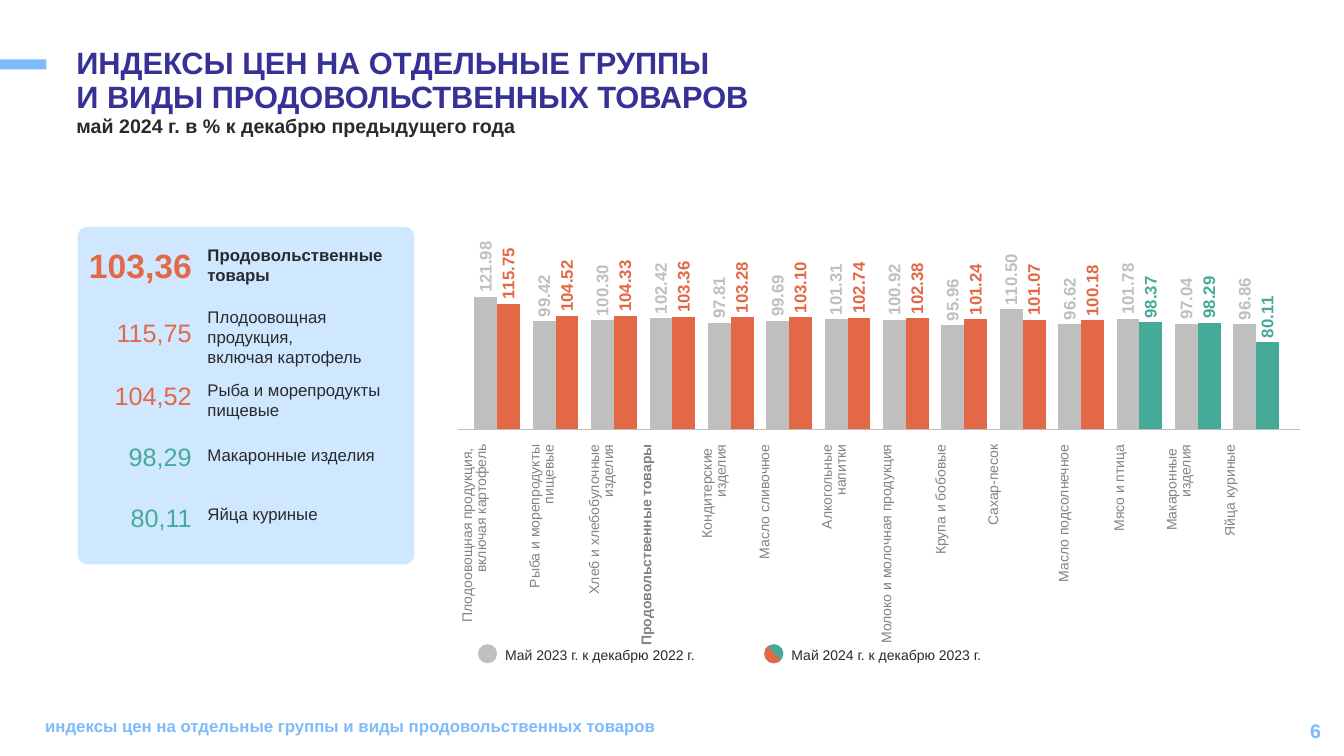
from lxml.etree import SubElement
from pptx import Presentation
from pptx.chart.data import CategoryChartData
from pptx.dml.color import RGBColor
from pptx.enum.chart import XL_CHART_TYPE, XL_LABEL_POSITION
from pptx.enum.shapes import MSO_CONNECTOR, MSO_SHAPE
from pptx.enum.text import MSO_ANCHOR, PP_ALIGN
from pptx.oxml.ns import qn
from pptx.util import Inches, Pt

FONT = "Arial"
NO_GRID_STYLE = "{2D5ABB26-0587-4C30-8999-92F81FD0307C}"
COLORS = {"title": "363194", "text": "282A2E", "sky": "7DBBFC", "panel": "CFE8FF",
          "up": "E36846", "down": "46AA98", "past": "BFBFBF", "axis": "838383"}

HIGHLIGHTS = [
    ("103,36", "Продовольственные товары", "up", 2.38, 2.38, 1),
    ("115,75", "Плодоовощная продукция, \nвключая картофель", "up", 3.1, 2.99, 1),
    ("104,52", "Рыба и морепродукты пищевые", "up", 3.72, 3.72, 1),
    ("98,29", "Макаронные изделия", "down", 4.33, 4.4, 0.8),
    ("80,11", "Яйца куриные", "down", 4.93, 4.99, 0.8),
]
GOODS = [
    ("Плодоовощная продукция, \nвключая картофель", 0.67, 121.98, 115.75),
    ("Рыба и морепродукты пищевые", 0.59, 99.42, 104.52),
    ("Хлеб и хлебобулочные изделия", 0.52, 100.30, 104.33),
    ("Продовольственные товары", 0.6, 102.42, 103.36),
    ("Кондитерские \nизделия", 0.57, 97.81, 103.28),
    ("Масло сливочное", 0.62, 99.69, 103.10),
    ("Алкогольные\nнапитки", 0.59, 101.31, 102.74),
    ("Молоко и молочная продукция", 0.54, 100.92, 102.38),
    ("Крупа и бобовые", 0.52, 95.96, 101.24),
    ("Сахар-песок", 0.7, 110.50, 101.07),
    ("Масло подсолнечное", 0.55, 96.62, 100.18),
    ("Мясо и птица", 0.52, 101.78, 98.37),
    ("Макаронные \nизделия", 0.58, 97.04, 98.29),
    ("Яйца куриные", 0.76, 96.86, 80.11),
]
TOTAL = "Продовольственные товары"


def rgb(name):
    """Return a palette colour."""
    return RGBColor.from_string(COLORS[name])


def style_font(font, size, color, bold=False):
    """Set family, size, colour and weight of a font."""
    font.name, font.size, font.bold = FONT, Pt(size), bold
    font.color.rgb = rgb(color)


def write(tf, text, size=12, color="text", bold=False, align=PP_ALIGN.LEFT, spacing=1):
    """Fill a text frame with one formatted paragraph."""
    tf.word_wrap = True
    p = tf.paragraphs[0]
    p.alignment, p.line_spacing = align, spacing
    for i, line in enumerate(text.split("\n")):
        if i:
            p.add_line_break()
        r = p.add_run()
        r.text = line
        style_font(r.font, size, color, bold)


def add_text(s, box, text, inset=None, anchor=MSO_ANCHOR.TOP, **fmt):
    """Add a text box at box (left, top, width, height)."""
    tf = s.shapes.add_textbox(*map(Inches, box)).text_frame
    tf.vertical_anchor = anchor
    if inset is not None:
        tf.margin_left = tf.margin_right = tf.margin_top = tf.margin_bottom = Inches(inset)
    write(tf, text, **fmt)


def add_block(s, kind, box, color):
    """Add a plain filled shape."""
    sp = s.shapes.add_shape(kind, *map(Inches, box))
    sp.shadow.inherit = False
    sp.fill.solid()
    sp.fill.fore_color.rgb = rgb(color)
    sp.line.fill.background()
    return sp


def add_header(s, x, y, w):
    """Draw the accent bar, title and subtitle."""
    add_block(s, MSO_SHAPE.RECTANGLE, (0, y + 0.16, 0.46, 0.1), "sky")
    add_text(s, (x, y, w, 0.68), "ИНДЕКСЫ ЦЕН НА ОТДЕЛЬНЫЕ ГРУППЫ\nИ ВИДЫ ПРОДОВОЛЬСТВЕННЫХ ТОВАРОВ",
             size=22, color="title", bold=True, spacing=0.9)
    add_text(s, (x, y + 0.68, w, 0.4), "май 2024 г. в % к декабрю предыдущего года",
             size=14, bold=True, spacing=0.9)


def add_panel(s, x, y, w, h):
    """Draw the panel of highlighted indices."""
    add_block(s, MSO_SHAPE.ROUNDED_RECTANGLE, (x, y, w, h), "panel").adjustments[0] = 0.03
    for i, (value, label, color, value_top, label_top, spacing) in enumerate(HIGHLIGHTS):
        main = i == 0
        add_text(s, (x - 0.05, value_top, 1.28, 0.5 if main else 0.4), value,
                 size=24 if main else 18, color=color, bold=main, align=PP_ALIGN.RIGHT)
        add_text(s, (x + 1.19, label_top, 2.13, 0.5), label, bold=main, spacing=spacing)


def set_plot_area(chart, **frame):
    """Fix the inner plot area as fractions of the chart."""
    area = chart._chartSpace.chart.plotArea
    for old in area.findall(qn("c:layout")):
        area.remove(old)
    layout = SubElement(area, qn("c:layout"))
    area.insert(0, layout)
    manual = SubElement(layout, qn("c:manualLayout"))
    items = {"layoutTarget": "inner", "xMode": "edge", "yMode": "edge", **frame}
    for tag, value in items.items():
        SubElement(manual, qn(f"c:{tag}")).set("val", str(value))


def add_index_chart(s, x, y, w, h):
    """Draw the column chart and its base line."""
    data = CategoryChartData(number_format="0.00")
    data.categories = [str(i + 1) for i in range(len(GOODS))]
    data.add_series("Май 2023 г. к декабрю 2022 г.", [g[2] for g in GOODS])
    data.add_series("Май 2024 г. к декабрю 2023 г.", [g[3] for g in GOODS])
    chart = s.shapes.add_chart(XL_CHART_TYPE.COLUMN_CLUSTERED,
                               *map(Inches, (x, y, w, h)), data).chart
    chart.has_legend = chart.has_title = False
    style_font(chart.font, 10, "text")
    chart.value_axis.minimum_scale, chart.value_axis.maximum_scale = 0, 190
    chart.value_axis.has_major_gridlines = False
    chart.value_axis.visible = chart.category_axis.visible = False
    set_plot_area(chart, x=0.01, y=0.05, w=0.984, h=0.875)
    plot = chart.plots[0]
    plot.gap_width, plot.overlap, plot.vary_by_categories = 56, 0, False
    for series, color in zip(plot.series, ("past", "up")):
        series.format.fill.solid()
        series.format.fill.fore_color.rgb = rgb(color)
        labels = series.data_labels
        labels.show_value = True
        labels.number_format, labels.number_format_is_linked = "#,##0.00", False
        labels.position = XL_LABEL_POSITION.OUTSIDE_END
        style_font(labels.font, 12, color, True)
    for i, good in enumerate(GOODS):
        if good[3] < 100:
            point = plot.series[1].points[i]
            point.format.fill.solid()
            point.format.fill.fore_color.rgb = rgb("down")
            style_font(point.data_label.font, 12, "down", True)
            point.data_label.position = XL_LABEL_POSITION.OUTSIDE_END
    for body in chart._chartSpace.xpath(".//c:dLbls//a:bodyPr"):
        body.set("rot", "-5400000")
        body.set("vert", "horz")
    base = s.shapes.add_connector(MSO_CONNECTOR.STRAIGHT, *map(
        Inches, (x - 0.02, y + 2.16, x + 8.33, y + 2.16)))
    base.line.color.rgb, base.line.width = rgb("past"), Pt(1)
    SubElement(base._element.spPr, qn("a:effectLst"))


def add_goods_names(s, x, y, w, h):
    """Draw the row of upright names under the columns."""
    table = s.shapes.add_table(1, len(GOODS), *map(Inches, (x, y, w, h))).table
    table.first_row = table.horz_banding = False
    table._tbl.tblPr.find(qn("a:tableStyleId")).text = NO_GRID_STYLE
    for i, (name, width, *_) in enumerate(GOODS):
        table.columns[i].width = Inches(width)
        cell = table.cell(0, i)
        cell.vertical_anchor = MSO_ANCHOR.MIDDLE
        cell.margin_left = cell.margin_right = cell.margin_top = Inches(0.01)
        cell.margin_bottom = 0
        tc_pr = cell._tc.get_or_add_tcPr()
        tc_pr.set("vert", "vert270")
        for side in ("lnL", "lnR", "lnT", "lnB"):
            SubElement(SubElement(tc_pr, qn(f"a:{side}"), w="0"), qn("a:noFill"))
        cell.fill.background()
        write(cell.text_frame, name, size=10, color="axis", bold=name == TOTAL,
              align=PP_ALIGN.RIGHT, spacing=0.9)


def add_legend(s, x, y, step):
    """Draw the two legend entries."""
    size = 0.19
    for i, (text, color) in enumerate((("Май 2023 г. к декабрю 2022 г.", "past"),
                                       ("Май 2024 г. к декабрю 2023 г.", "down"))):
        left = x + i * step
        add_block(s, MSO_SHAPE.OVAL, (left, y, size, size), color)
        add_text(s, (left + 0.27, y + 0.02, 2.35, 0.18), text, inset=0, size=10)
    half = add_block(s, MSO_SHAPE.CHORD, (x + step, y, size, size), "up")
    half.adjustments[0], half.adjustments[1] = 27, 138.88


def add_footer(s, x, y, h):
    """Draw the running title and page number."""
    add_text(s, (x, y, 9.5, h), "индексы цен на отдельные группы и виды продовольственных товаров",
             color="sky", bold=True)
    add_text(s, (10.2, y, 3, h), "6", anchor=MSO_ANCHOR.MIDDLE, size=14, color="sky",
             bold=True, align=PP_ALIGN.RIGHT)


def main():
    """Build the slide and save it."""
    prs = Presentation()
    prs.slide_width, prs.slide_height = Inches(13.33), Inches(7.5)
    s = prs.slides.add_slide(prs.slide_layouts[6])
    add_header(s, 0.66, 0.43, 8.87)
    add_panel(s, 0.77, 2.25, 3.34, 3.35)
    add_goods_names(s, 4.56, 4.4, 8.35, 1.54)
    add_index_chart(s, 4.56, 2.1, 8.24, 2.33)
    add_legend(s, 4.74, 6.39, 2.84)
    add_footer(s, 0.35, 7.05, 0.4)
    prs.save("out.pptx")


if __name__ == "__main__":
    main()
